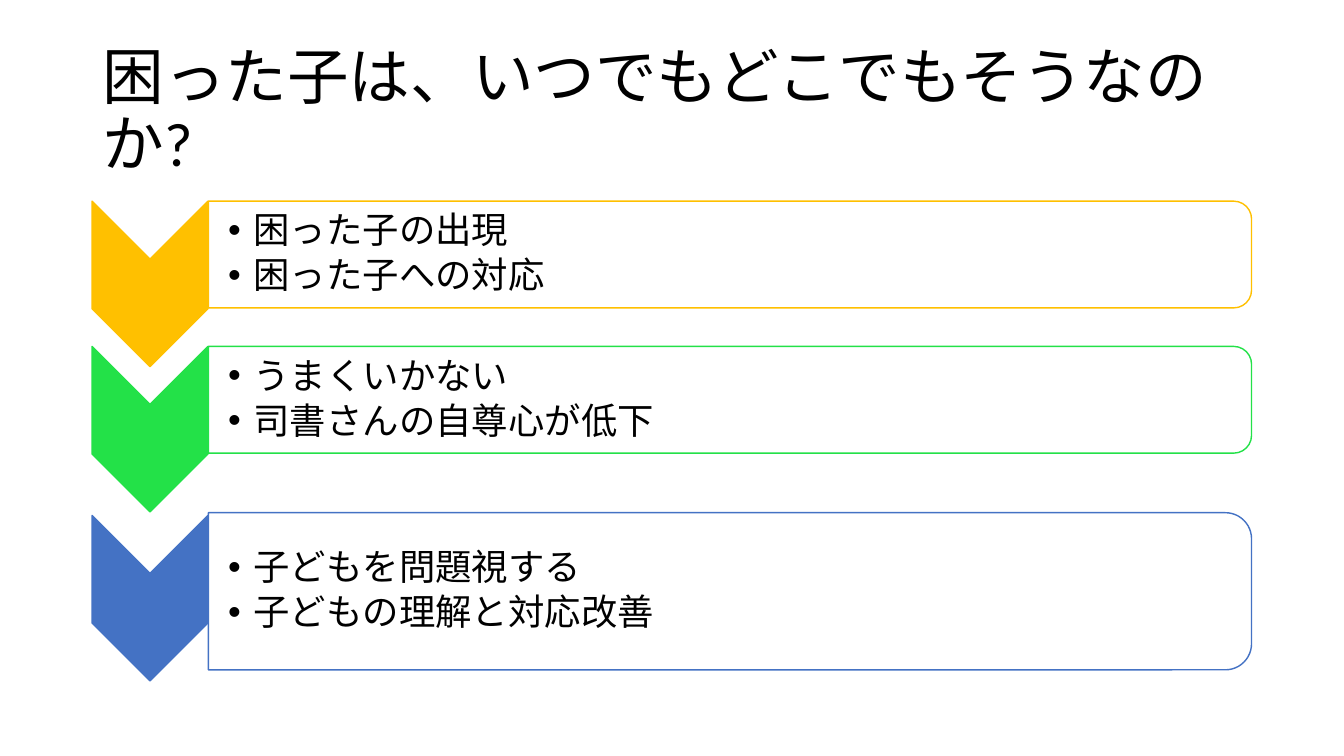
from pptx import Presentation
from pptx import util as u
from pptx.dml.color import RGBColor
from pptx.enum import shapes, text
from pptx.oxml import parse_xml
from pptx.oxml.ns import nsdecls

TITLE = "困った子は、いつでもどこでもそうなのか?"
# Colour, panel top, panel height, chevron top (cm), points
STAGES = [
    ("FFC000", 5.07, 2.69, 5.07, ["困った子の出現", "困った子への対応"]),
    ("23E148", 8.73, 2.69, 8.73, ["うまくいかない", "司書さんの自尊心が低下"]),
    ("4472C4", 12.92, 3.96, 12.99, ["子どもを問題視する", "子どもの理解と対応改善"]),
]
CHEVRON_LEFT, CHEVRON_WIDTH, CHEVRON_HEIGHT = 2.32, 2.92, 4.17
PANEL_LEFT, PANEL_WIDTH = 5.25, 26.29
LIST_TRIM = 0.25


def colour(hex_value):
    return RGBColor.from_string(hex_value)


def apply(target, formats):
    for name, value in formats.items():
        setattr(target, name, value)


def place(part, left, top, width, height):
    apply(part, {"left": u.Cm(left), "top": u.Cm(top),
                 "width": u.Cm(width), "height": u.Cm(height)})


def format_text(paragraph, size):
    apply(paragraph, {"alignment": text.PP_ALIGN.LEFT, "line_spacing": 0.9,
                      "space_before": u.Pt(0)})
    for run in paragraph.runs:
        apply(run.font, {"name": "Calibri", "size": u.Pt(size), "bold": False})
        run.font.color.rgb = colour("000000")


def add_turned(slide, preset, box, fill, line):
    """Add a preset turned by 90 degrees so that it covers the given box."""
    left, top, width, height = box
    turned = slide.shapes.add_shape(preset, 0, 0, 0, 0)
    place(turned, left + (width - height) / 2, top + (height - width) / 2, height, width)
    turned.rotation = 90
    turned.shadow.inherit = False
    turned.fill.solid()
    turned.fill.fore_color.rgb = colour(fill)
    turned.line.color.rgb = colour(line)
    turned.line.width = u.Pt(1)


def fill_title(title, box):
    place(title, *box)
    title.text_frame.text = TITLE
    apply(title.text_frame, {"vertical_anchor": text.MSO_ANCHOR.MIDDLE,
                             "auto_size": text.MSO_AUTO_SIZE.NONE, "word_wrap": True})
    format_text(title.text_frame.paragraphs[0], 44)


def fill_list(body, box, points):
    place(body, *box)
    frame = body.text_frame
    frame.text = "\n".join(points)
    apply(frame, {"vertical_anchor": text.MSO_ANCHOR.MIDDLE,
                  "auto_size": text.MSO_AUTO_SIZE.NONE, "word_wrap": True,
                  "margin_left": u.Cm(0.5), "margin_right": u.Cm(0.05),
                  "margin_top": u.Cm(0.05), "margin_bottom": u.Cm(0.05)})
    for paragraph in frame.paragraphs:
        format_text(paragraph, 26)
        paragraph.space_after = u.Pt(4)
        properties = paragraph._p.get_or_add_pPr()
        properties.set("marL", str(u.Cm(0.64)))
        properties.set("indent", str(u.Cm(-0.64)))
        properties.append(parse_xml(f'<a:buFont {nsdecls("a")} typeface="Arial"/>'))
        properties.append(parse_xml(f'<a:buChar {nsdecls("a")} char="•"/>'))


def add_stage(slide, body, stage):
    hue, top, height, chevron_top, points = stage
    add_turned(slide, shapes.MSO_SHAPE.CHEVRON,
               (CHEVRON_LEFT, chevron_top, CHEVRON_WIDTH, CHEVRON_HEIGHT), hue, hue)
    add_turned(slide, shapes.MSO_SHAPE.ROUND_2_SAME_RECTANGLE,
               (PANEL_LEFT, top, PANEL_WIDTH, height), "FFFFFF", hue)
    fill_list(body, (PANEL_LEFT, top + LIST_TRIM / 2,
                     PANEL_WIDTH - LIST_TRIM / 2, height - LIST_TRIM), points)
    slide.shapes._spTree.append(body._element)  # bring the list in front of its panel


def main():
    deck = Presentation()
    apply(deck, {"slide_width": u.Cm(33.87), "slide_height": u.Cm(19.05)})
    slide = deck.slides.add_slide(deck.slide_layouts.get_by_name("Comparison"))
    title, *bodies = slide.placeholders
    fill_title(title, (2.33, 1.01, 29.21, 3.68))
    for body, stage in zip(bodies, STAGES):
        add_stage(slide, body, stage)
    for spare in bodies[len(STAGES):]:
        spare._element.getparent().remove(spare._element)
    deck.save("out.pptx")


if __name__ == "__main__":
    main()
